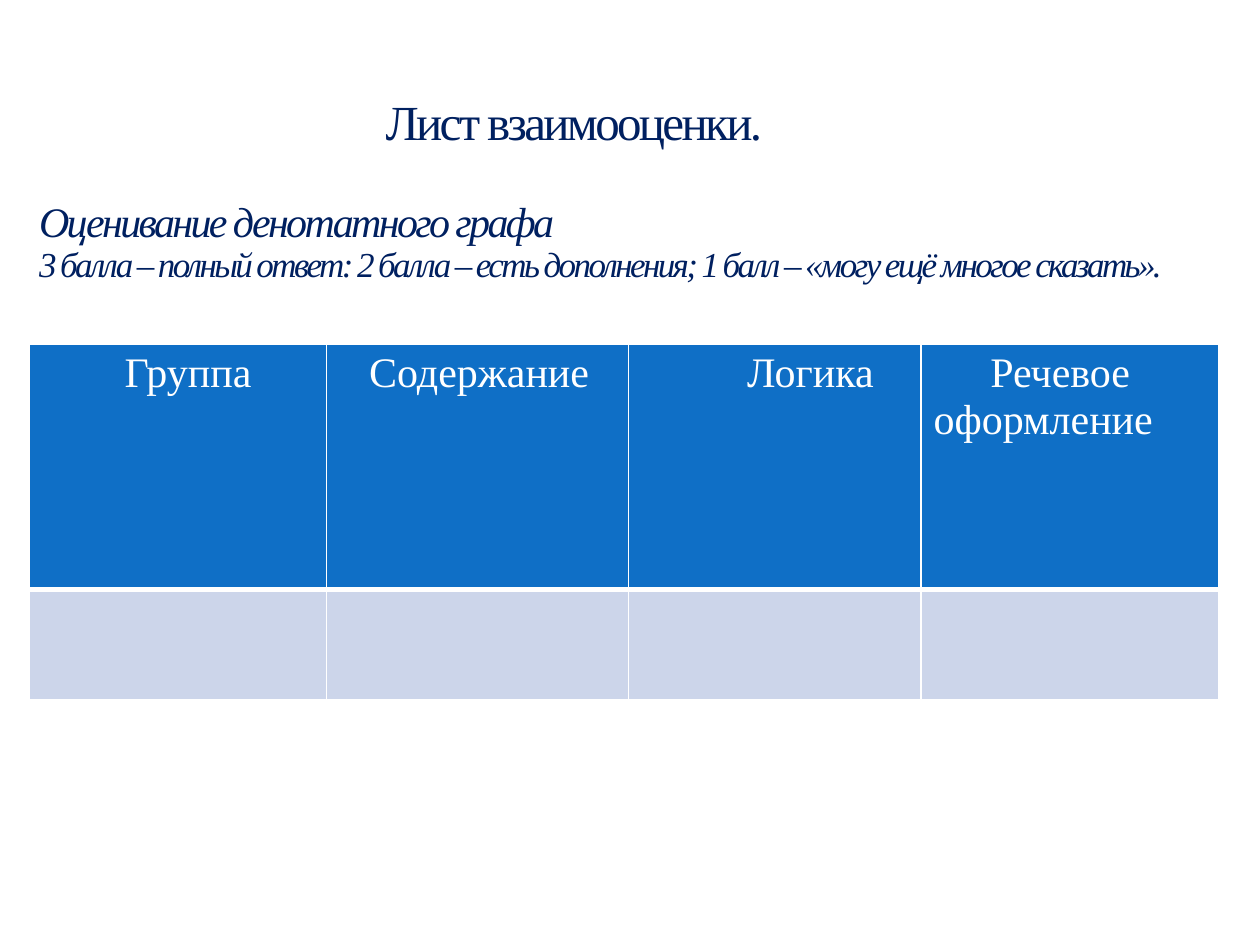
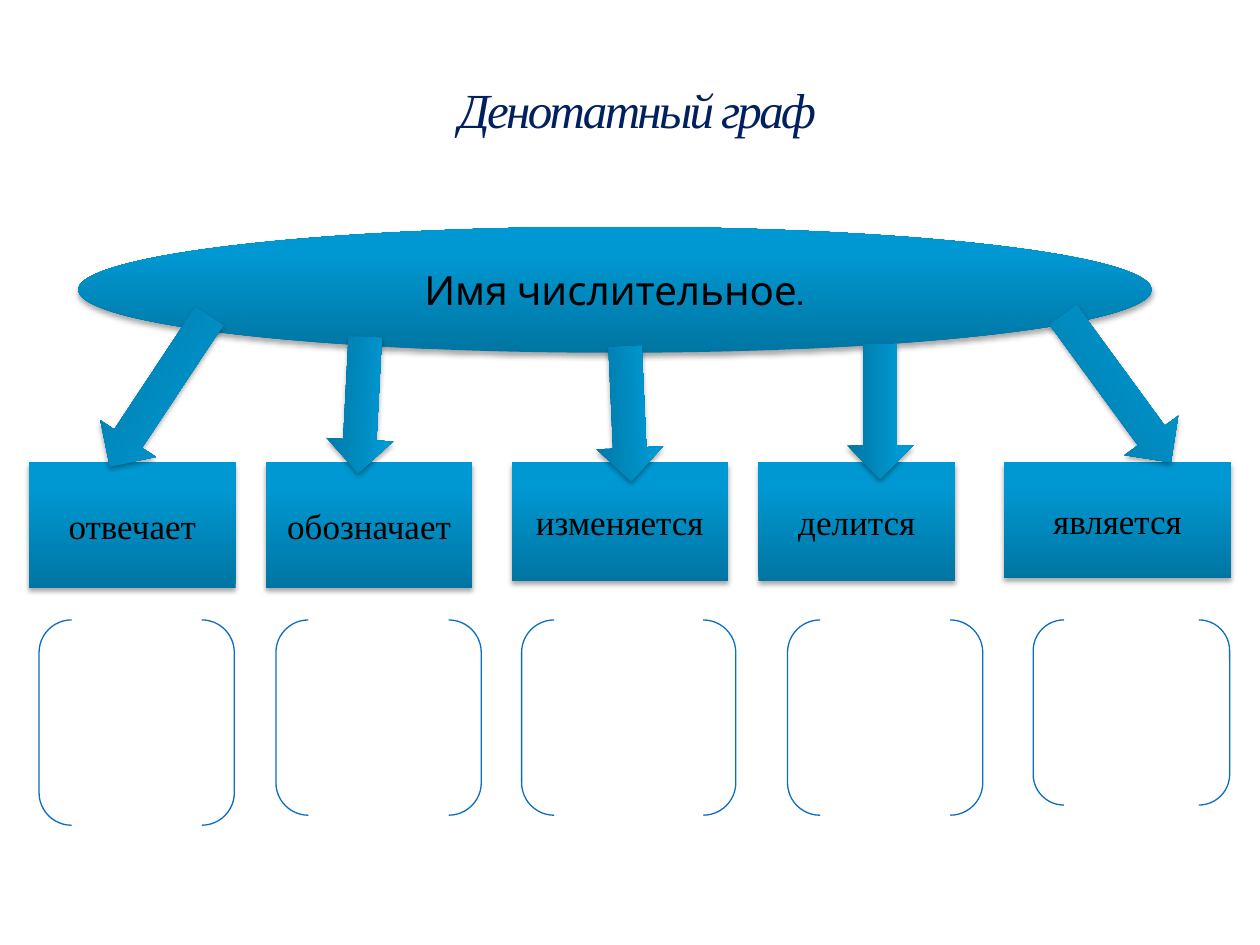
from collections import namedtuple
from dataclasses import dataclass

from lxml.etree import SubElement
from pptx import Presentation
from pptx.dml.color import RGBColor
from pptx.enum.shapes import MSO_SHAPE as Shape
from pptx.enum.text import MSO_ANCHOR as Anchor, PP_ALIGN as Align
from pptx.oxml.ns import qn
from pptx.util import Inches, Pt

Box = namedtuple("Box", "left top width height")
TitleLine = namedtuple("TitleLine", "text size italic indent space_before")
Column = namedtuple("Column", "label box arrow angle bracket")


@dataclass(frozen=True)
class Theme:
    title: str = "002060"
    white: str = "FFFFFF"
    black: str = "000000"
    header: str = "0F6FC6"
    band: str = "CCD5EA"
    bracket: str = "0A6DC6"
    gradient: tuple = ((0, "0075A2"), (80, "0098D2"), (100, "0099D3"))
    serif: str = "Times New Roman"
    topic_font: str = "Cabin"
    title_size: float = 28
    heading_size: float = 24
    topic_size: float = 23
    body_size: float = 20
    title_spacing: float = -1.5
    line_spacing: float = 0.9


THEME = Theme()


def place(box):
    return [Inches(value) for value in box]


def add_blank_slide(presentation):
    return presentation.slides.add_slide(presentation.slide_layouts[6])


def format_runs(paragraph, size, color, font=THEME.serif, italic=False):
    for run in paragraph.runs:
        run.font.name = font
        run.font.size = Pt(size)
        run.font.bold = False
        run.font.italic = italic
        run.font.color.rgb = RGBColor.from_string(color)


def add_title(slide, box, lines):
    """Stack title lines against the bottom of the box."""
    frame = slide.shapes.add_textbox(*place(box)).text_frame
    frame.word_wrap = True
    frame.vertical_anchor = Anchor.BOTTOM
    frame.margin_left = frame.margin_right = 0
    frame.margin_top = frame.margin_bottom = 0
    for index, line in enumerate(lines):
        paragraph = frame.add_paragraph() if index else frame.paragraphs[0]
        paragraph.text = line.text
        paragraph.line_spacing = THEME.line_spacing
        if line.space_before:
            paragraph.space_before = Pt(line.space_before)
        paragraph._p.get_or_add_pPr().set("marL", str(Inches(line.indent)))
        format_runs(paragraph, line.size, THEME.title, italic=line.italic)
        for run in paragraph.runs:
            run._r.get_or_add_rPr().set("spc", str(int(THEME.title_spacing * 100)))


def add_border(cell, side, width):
    properties = cell._tc.get_or_add_tcPr()
    line = SubElement(properties, qn(f"a:ln{side}"), w=str(Pt(width)))
    fill = SubElement(line, qn("a:solidFill"))
    SubElement(fill, qn("a:srgbClr"), val=THEME.white)


def add_score_table(slide, box, widths, heights, headings):
    """Header row of criteria above one empty row for the marks."""
    table = slide.shapes.add_table(len(heights), len(widths), *place(box)).table
    for column, width in zip(table.columns, widths):
        column.width = Inches(width)
    for row, height in zip(table.rows, heights):
        row.height = Inches(height)
    for row_index, row in enumerate(table.rows):
        is_header = row_index == 0
        for cell in row.cells:
            for side in "LRTB":
                at_divider = side == ("B" if is_header else "T")
                add_border(cell, side, 3 if at_divider else 1)
            cell.fill.solid()
            color = THEME.header if is_header else THEME.band
            cell.fill.fore_color.rgb = RGBColor.from_string(color)
    for cell, (text, indent) in zip(table.rows[0].cells, headings):
        paragraph = cell.text_frame.paragraphs[0]
        paragraph.text = text
        paragraph._p.get_or_add_pPr().set("indent", str(Inches(indent)))
        format_runs(paragraph, THEME.heading_size, THEME.white)


def add_glossy_shape(slide, kind, box, angle=0):
    """Preset shape with the shared gradient and soft shadow."""
    shape = slide.shapes.add_shape(kind, *place(box))
    shape.rotation = angle
    shape.line.fill.background()
    shape.fill.gradient()
    shape.fill.gradient_angle = 90
    properties = shape._element.spPr
    stops = properties.find(".//" + qn("a:gsLst"))
    for stop in list(stops):
        stops.remove(stop)
    for position, color in THEME.gradient:
        stop = SubElement(stops, qn("a:gs"), pos=str(position * 1000))
        SubElement(stop, qn("a:srgbClr"), val=color)
    shape.shadow.inherit = False
    shadow = SubElement(
        properties.find(qn("a:effectLst")), qn("a:outerShdw"),
        blurRad=str(Pt(3.1)), dist=str(Pt(1.8)), dir="5400000", rotWithShape="0",
    )
    shadow_color = SubElement(shadow, qn("a:srgbClr"), val=THEME.black)
    SubElement(shadow_color, qn("a:alpha"), val="35000")
    return shape


def add_label_shape(slide, kind, box, text, size, font=THEME.serif):
    frame = add_glossy_shape(slide, kind, box).text_frame
    frame.text = text
    frame.word_wrap = True
    frame.vertical_anchor = Anchor.MIDDLE
    paragraph = frame.paragraphs[0]
    paragraph.alignment = Align.CENTER
    format_runs(paragraph, size, THEME.black, font)


def add_bracket(slide, box):
    bracket = slide.shapes.add_shape(Shape.DOUBLE_BRACKET, *place(box))
    bracket.fill.background()
    bracket.line.color.rgb = RGBColor.from_string(THEME.bracket)
    bracket.line.width = Pt(0.75)
    bracket.shadow.inherit = False


def add_graph(slide, box, columns):
    """Topic ellipse on top, then a verb, an arrow and a bracket per column."""
    arrow_height, verb_top, bracket_top = 0.53, 1.87, 3.12

    def inside(left, top, width, height):
        return Box(box.left + left, box.top + top, width, height)

    add_label_shape(slide, Shape.OVAL, inside(0.39, 0, 8.52, 1),
                    "Имя числительное.", THEME.topic_size, THEME.topic_font)
    for column in columns:
        left, width, height = column.box
        add_label_shape(slide, Shape.RECTANGLE, inside(left, verb_top, width, height),
                        column.label, THEME.body_size)
        left, top, length = column.arrow
        add_glossy_shape(slide, Shape.RIGHT_ARROW,
                         inside(left, top, length, arrow_height), column.angle)
        left, width, height = column.bracket
        add_bracket(slide, inside(left, bracket_top, width, height))


def build_score_slide(presentation):
    slide = add_blank_slide(presentation)
    add_title(slide, Box(0.31, 0.31, 9.32, 1.95), [
        TitleLine("Лист взаимооценки.", THEME.title_size, False, 2.75, 0),
        TitleLine("Оценивание денотатного графа", THEME.heading_size, True, 0, 29),
        TitleLine("3 балла – полный ответ: 2 балла – есть дополнения; "
                  "1 балл – «могу ещё многое сказать».", THEME.body_size, True, 0, 0),
    ])
    add_score_table(
        slide, Box(0.23, 2.73, 9.45, 2.81), [2.36, 2.4, 2.32, 2.36], [1.95, 0.87],
        [("Группа", 0.66), ("Содержание", 0.24), ("Логика", 0.84),
         ("Речевое оформление", 0.45)],
    )


def build_graph_slide(presentation):
    slide = add_blank_slide(presentation)
    add_title(slide, Box(0.42, 0.25, 9.17, 0.85), [
        TitleLine("Денотатный граф", THEME.title_size, True, 3.22, 0),
    ])
    # Verb box and bracket: left, width, height; arrow: left, top, length
    add_graph(slide, Box(0.23, 1.8, 9.54, 4.75), [
        Column("отвечает", (0, 1.64, 1), (0.32, 1.04, 1.43), 123.5, (0.08, 1.55, 1.63)),
        Column("обозначает", (1.88, 1.64, 1), (2.1, 1.15, 1.08), 93, (1.96, 1.63, 1.55)),
        Column("изменяется", (3.83, 1.72, 0.94), (4.22, 1.22, 1.07), 87.4, (3.91, 1.7, 1.55)),
        Column("делится", (5.79, 1.56, 0.94), (6.22, 1.2, 1.07), 90, (6.02, 1.55, 1.55)),
        Column("является", (7.74, 1.8, 0.92), (7.91, 1.02, 1.45), 53.8, (7.97, 1.56, 1.47)),
    ])


def main():
    presentation = Presentation()
    presentation.slide_width = Inches(10)
    presentation.slide_height = Inches(7.5)
    build_score_slide(presentation)
    build_graph_slide(presentation)
    presentation.save("out.pptx")


if __name__ == "__main__":
    main()
